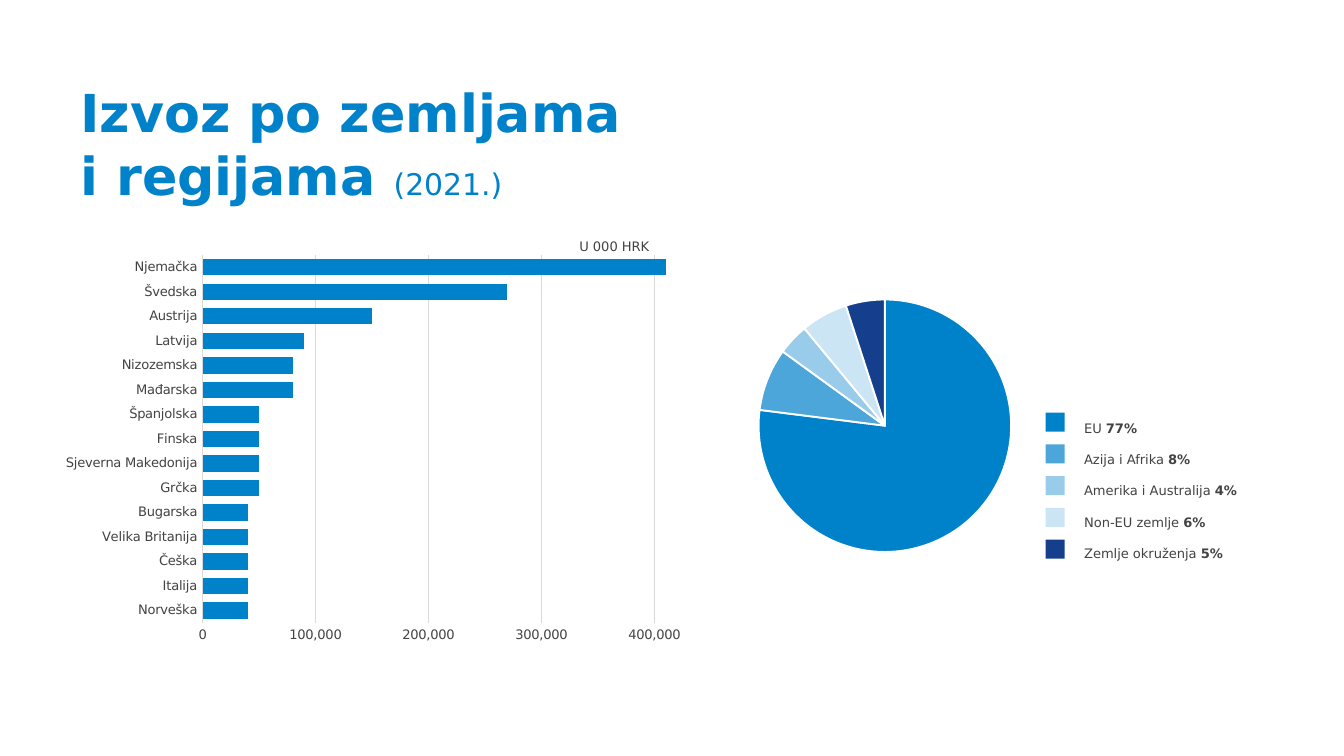
from dataclasses import dataclass
from typing import NamedTuple

import pptx
import pptx.chart.data
import pptx.dml.color
import pptx.enum.chart
import pptx.enum.shapes
import pptx.enum.text
import pptx.oxml
import pptx.oxml.ns
import pptx.util
from pptx.util import Cm


@dataclass(frozen=True)
class Theme:
    font: str = "DejaVu Sans"
    pie_font: str = "Arial"
    blue: str = "0082CA"
    text: str = "434343"
    grid: str = "D9D9D9"
    white: str = "FFFFFF"
    title_size: float = 28
    year_size: float = 16
    label_size: float = 7
    chart_size: float = 10
    hairline: float = 0.75


class Box(NamedTuple):
    """Left, top, width and height in centimetres."""
    left: float
    top: float
    width: float
    height: float

    def lengths(self) -> list:
        return [Cm(side) for side in self]


class Region(NamedTuple):
    name: str
    percent: int
    color: str


class Country(NamedTuple):
    name: str
    exports: int


THEME = Theme()
REGIONS = [
    Region("EU", 77, THEME.blue),
    Region("Azija i Afrika", 8, "4DA6D9"),
    Region("Amerika i Australija", 4, "99CCEB"),
    Region("Non-EU zemlje", 6, "CCE5F5"),
    Region("Zemlje okruženja", 5, "153E8D"),
]
COUNTRIES = [
    Country("Norveška", 40000),
    Country("Italija", 40000),
    Country("Češka", 40000),
    Country("Velika Britanija", 40000),
    Country("Bugarska", 40000),
    Country("Grčka", 50000),
    Country("Sjeverna Makedonija", 50000),
    Country("Finska", 50000),
    Country("Španjolska", 50000),
    Country("Mađarska", 80000),
    Country("Nizozemska", 80000),
    Country("Latvija", 90000),
    Country("Austrija", 150000),
    Country("Švedska", 270000),
    Country("Njemačka", 410000),
]
TITLE_BOX = Box(1.27, 1.27, 14.55, 3.07)
PIE_BOX = Box(10.87, 4.67, 11.71, 6.2)
UNIT_BOX = Box(10.49, 4.39, 2.24, 0.56)
BAR_BOX = Box(0.99, 4.67, 12.7, 7.62)
LEGEND_BOX = Box(20.24, 7.52, 4.65, 3.2)
FIRST_SWATCH = Box(19.76, 7.8, 0.36, 0.36)
SWATCH_PITCH = 0.6
PIE_PLOT = {"x": 0.27, "y": 0.16, "w": 0.46, "h": 0.77}


def rgb(color: str) -> pptx.dml.color.RGBColor:
    return pptx.dml.color.RGBColor.from_string(color)


def style_font(font, size: float, color: str, bold: bool = False,
               name: str = THEME.font) -> None:
    font.name = name
    font.size = pptx.util.Pt(size)
    font.bold = bold
    font.color.rgb = rgb(color)


def style_line(line, color: str, width: float) -> None:
    line.color.rgb = rgb(color)
    line.width = pptx.util.Pt(width)


def fill_solid(fill, color: str) -> None:
    fill.solid()
    fill.fore_color.rgb = rgb(color)


def add_text_frame(shapes, box: Box):
    frame = shapes.add_textbox(*box.lengths()).text_frame
    frame.word_wrap = True
    return frame


def add_title(slide) -> None:
    frame = add_text_frame(slide.shapes, TITLE_BOX)
    frame.margin_top = frame.margin_bottom = Cm(0.25)
    heading = frame.paragraphs[0]
    heading.text = "Izvoz po zemljama\vi regijama "
    for run in heading.runs:
        style_font(run.font, THEME.title_size, THEME.blue, bold=True)
    year = heading.add_run()
    year.text = "(2021.)"
    style_font(year.font, THEME.year_size, THEME.blue)


def add_chart(slide, kind, box: Box, categories: list, values: list, font_name: str):
    """Add a one-series chart without title, legend or background."""
    data = pptx.chart.data.CategoryChartData()
    data.categories = categories
    data.add_series("Series 1", values)
    chart = slide.shapes.add_chart(kind, *box.lengths(), data).chart
    chart.has_title = False
    chart.has_legend = False
    style_font(chart.font, THEME.chart_size, "000000", name=font_name)
    clear = pptx.oxml.parse_xml(
        f'<c:spPr {pptx.oxml.ns.nsdecls("c", "a")}>'
        "<a:noFill/><a:ln><a:noFill/></a:ln></c:spPr>")
    chart.element.find(pptx.oxml.ns.qn("c:txPr")).addprevious(clear)
    return chart


def set_inner_plot(chart, plot: dict) -> None:
    area = chart.element.find(".//" + pptx.oxml.ns.qn("c:plotArea"))
    for layout in area.findall(pptx.oxml.ns.qn("c:layout")):
        area.remove(layout)
    modes = "".join(f'<c:{axis}Mode val="edge"/>' for axis in "xy")
    sides = "".join(f'<c:{side} val="{share}"/>' for side, share in plot.items())
    area.insert(0, pptx.oxml.parse_xml(
        f'<c:layout {pptx.oxml.ns.nsdecls("c")}><c:manualLayout>'
        f'<c:layoutTarget val="inner"/>{modes}{sides}</c:manualLayout></c:layout>'))


def add_region_pie(slide) -> None:
    chart = add_chart(slide, pptx.enum.chart.XL_CHART_TYPE.PIE, PIE_BOX,
                      [str(number) for number in range(1, len(REGIONS) + 1)],
                      [region.percent for region in REGIONS], THEME.pie_font)
    set_inner_plot(chart, PIE_PLOT)
    chart.plots[0].vary_by_categories = True
    for index, region in enumerate(REGIONS):
        slice_format = chart.plots[0].series[0].points[index].format
        fill_solid(slice_format.fill, region.color)
        style_line(slice_format.line, THEME.white, 1)


def add_unit_label(slide) -> None:
    frame = add_text_frame(slide.shapes, UNIT_BOX)
    frame.auto_size = pptx.enum.text.MSO_AUTO_SIZE.SHAPE_TO_FIT_TEXT
    unit = frame.paragraphs[0]
    unit.text = "U 000 HRK"
    unit.alignment = pptx.enum.text.PP_ALIGN.CENTER
    style_font(unit.runs[0].font, THEME.label_size, THEME.text)


def add_legend(slide) -> None:
    legend = slide.shapes.add_group_shape().shapes
    for index, region in enumerate(REGIONS):
        box = FIRST_SWATCH._replace(top=FIRST_SWATCH.top + index * SWATCH_PITCH)
        swatch = legend.add_shape(pptx.enum.shapes.MSO_SHAPE.RECTANGLE, *box.lengths())
        swatch.shadow.inherit = False
        fill_solid(swatch.fill, region.color)
        swatch.line.fill.background()
    frame = add_text_frame(legend, LEGEND_BOX)
    frame.auto_size = pptx.enum.text.MSO_AUTO_SIZE.SHAPE_TO_FIT_TEXT
    frame.text = "\n".join(f"{region.name} " for region in REGIONS)
    for entry, region in zip(frame.paragraphs, REGIONS):
        entry.line_spacing = 2.0
        style_font(entry.runs[0].font, THEME.label_size, THEME.text)
        share = entry.add_run()
        share.text = f"{region.percent}%"
        style_font(share.font, THEME.label_size, THEME.text, bold=True)


def add_country_bars(slide) -> None:
    chart = add_chart(slide, pptx.enum.chart.XL_CHART_TYPE.BAR_CLUSTERED, BAR_BOX,
                      [country.name for country in COUNTRIES],
                      [country.exports for country in COUNTRIES], THEME.font)
    bars = chart.plots[0]
    bars.vary_by_categories = False
    bars.gap_width, bars.overlap = 50, -81
    fill_solid(bars.series[0].format.fill, THEME.blue)

    countries, exports = chart.category_axis, chart.value_axis
    for axis in (countries, exports):
        axis.major_tick_mark = axis.minor_tick_mark = pptx.enum.chart.XL_TICK_MARK.NONE
        style_font(axis.tick_labels.font, THEME.label_size, THEME.text)
    countries.has_major_gridlines = False
    style_line(countries.format.line, THEME.grid, THEME.hairline)
    exports.minimum_scale, exports.maximum_scale, exports.major_unit = 0, 450000, 100000
    exports.has_major_gridlines = True
    style_line(exports.major_gridlines.format.line, THEME.grid, THEME.hairline)
    exports.format.line.fill.background()
    exports.tick_labels.number_format = "#,##0"
    exports.tick_labels.number_format_is_linked = False


def main() -> None:
    deck = pptx.Presentation()
    deck.slide_width, deck.slide_height = Cm(25.4), Cm(14.29)
    slide = deck.slides.add_slide(deck.slide_layouts[6])
    add_title(slide)
    add_region_pie(slide)
    add_unit_label(slide)
    add_legend(slide)
    add_country_bars(slide)
    deck.save("out.pptx")


if __name__ == "__main__":
    main()
